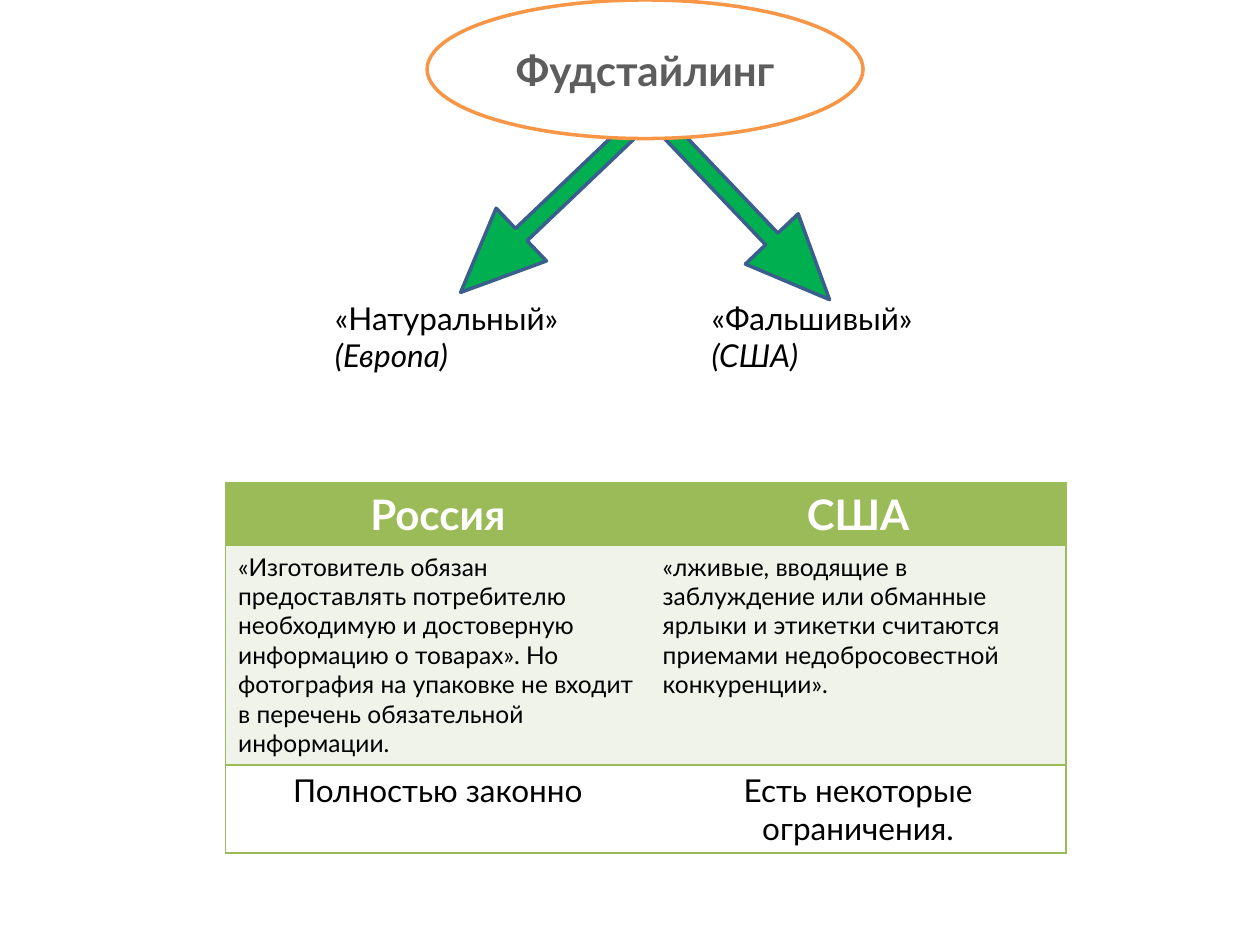
from dataclasses import dataclass

from lxml.etree import SubElement
from pptx import Presentation
from pptx.dml.color import RGBColor as RGB
from pptx.enum.shapes import MSO_SHAPE as SHAPE
from pptx.enum.text import MSO_ANCHOR as ANCHOR, MSO_AUTO_SIZE as AUTO_SIZE, PP_ALIGN as ALIGN
from pptx.oxml.ns import qn
from pptx.util import Inches, Pt


@dataclass(frozen=True)
class Theme:
    font: str = "Lato"
    heading: int = 24
    label: int = 18
    body: int = 14
    black: str = "000000"
    white: str = "FFFFFF"
    title: str = "5D5D5D"
    orange: str = "F79646"
    arrow: str = "00B050"
    arrow_line: str = "3A5F8C"
    green: str = "9BBB59"
    pale_green: str = "EFF3EA"


THEME = Theme()


def style(p, size, color=THEME.black, bold=False, italic=False, align=ALIGN.LEFT):
    p.alignment = align
    font = p.font
    font.name, font.size, font.bold, font.italic = THEME.font, Pt(size), bold, italic
    font.color.rgb = RGB.from_string(color)


def add_shape(s, kind, box, fill, line):
    sp = s.shapes.add_shape(kind, *map(Inches, box))
    sp.shadow.inherit = False
    sp.fill.solid()
    sp.fill.fore_color.rgb = RGB.from_string(fill)
    sp.line.color.rgb = RGB.from_string(line)
    sp.line.width = Pt(2)
    return sp


def add_split_arrow(s):
    sp = add_shape(s, SHAPE.LEFT_UP_ARROW, (3.95, 0.96, 2.35, 2.37),
                   THEME.arrow, THEME.arrow_line)
    sp.rotation = 226.4
    for i, value in enumerate((0.057, 0.123, 0.283)):
        sp.adjustments[i] = value


def add_topic(s, text):
    sp = add_shape(s, SHAPE.OVAL, (3.39, 0, 3.46, 1.1), THEME.white, THEME.orange)
    tf = sp.text_frame
    tf.vertical_anchor = ANCHOR.MIDDLE
    tf.text = text
    style(tf.paragraphs[0], THEME.heading, THEME.title, bold=True, align=ALIGN.CENTER)


def add_branch(s, left, width, name, region):
    sp = s.shapes.add_textbox(Inches(left), Inches(2.32), Inches(width), Inches(0.71))
    tf = sp.text_frame
    tf.word_wrap = True
    tf.auto_size = AUTO_SIZE.SHAPE_TO_FIT_TEXT
    tf.text = name
    style(tf.paragraphs[0], THEME.label)
    p = tf.add_paragraph()
    p.text = region
    style(p, THEME.label, italic=True)


def set_borders(cell, visible):
    """Draw the named sides (of L, R, T, B) and clear the others."""
    tc_pr = cell._tc.get_or_add_tcPr()
    for i, side in enumerate("LRTB"):
        ln = SubElement(tc_pr, qn(f"a:ln{side}"), w=str(Pt(1)))
        if side in visible:
            fill = SubElement(ln, qn("a:solidFill"))
            SubElement(fill, qn("a:srgbClr"), val=THEME.green)
        else:
            SubElement(ln, qn("a:noFill"))
        tc_pr.insert(i, ln)


def add_law_table(s, rows):
    widths, heights = (3.37, 3.3), (0.49, 1.74, 0.7)
    looks = (
        (THEME.green, dict(size=THEME.heading, color=THEME.white, bold=True, align=ALIGN.CENTER)),
        (THEME.pale_green, dict(size=THEME.body)),
        (THEME.white, dict(size=THEME.label, align=ALIGN.CENTER)),
    )
    table = s.shapes.add_table(len(rows), len(widths), Inches(1.79), Inches(3.83),
                               Inches(sum(widths)), Inches(sum(heights))).table
    table.first_row = table.horz_banding = False
    for column, width in zip(table.columns, widths):
        column.width = Inches(width)
    for row, height, texts, (fill, look) in zip(table.rows, heights, rows, looks):
        row.height = Inches(height)
        for cell, text, side in zip(row.cells, texts, "LR"):
            cell.text = text
            style(cell.text_frame.paragraphs[0], **look)
            cell.fill.solid()
            cell.fill.fore_color.rgb = RGB.from_string(fill)
            set_borders(cell, side + "TB")


def main():
    prs = Presentation()
    prs.slide_width, prs.slide_height = Inches(10), Inches(7.5)
    s = prs.slides.add_slide(prs.slide_layouts[6])
    add_split_arrow(s)
    add_topic(s, "Фудстайлинг")
    add_branch(s, 2.56, 2.05, "«Натуральный»", "(Европа)")
    add_branch(s, 5.55, 1.97, "«Фальшивый»", "(США)")
    add_law_table(s, (
        ("Россия", "США"),
        ("«Изготовитель обязан предоставлять потребителю необходимую и достоверную "
         "информацию о товарах». Но фотография на упаковке не входит в перечень "
         "обязательной информации.",
         "«лживые, вводящие в заблуждение или обманные ярлыки и этикетки считаются "
         "приемами недобросовестной конкуренции»."),
        ("Полностью законно", "Есть некоторые ограничения."),
    ))
    prs.save("out.pptx")


if __name__ == "__main__":
    main()
